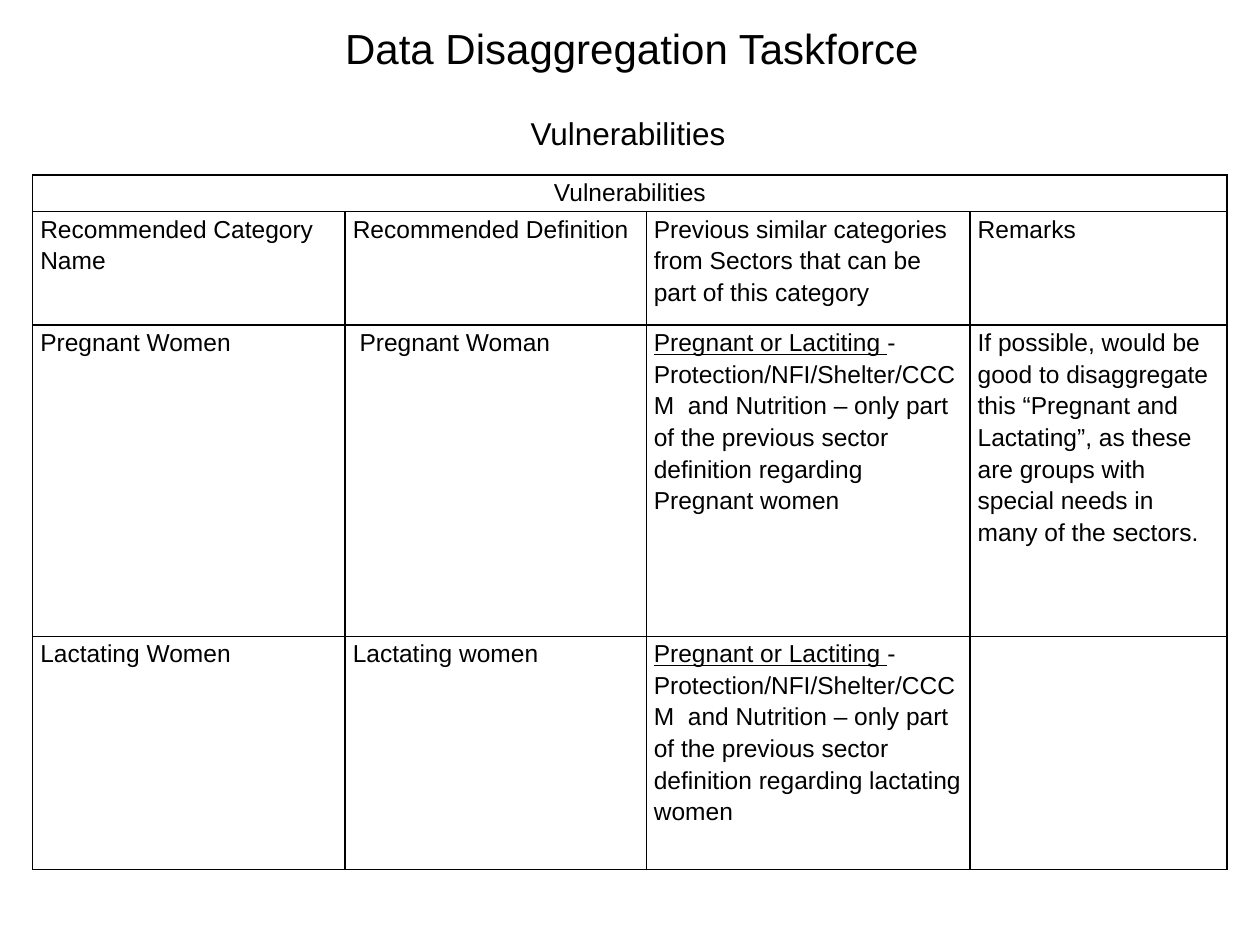
from typing import NamedTuple

from lxml.etree import SubElement
from pptx import Presentation
from pptx.dml.color import RGBColor
from pptx.enum.text import PP_ALIGN
from pptx.oxml.ns import qn
from pptx.util import Inches, Pt

INK, PAPER = "000000", "FFFFFF"
COLS = [2.48, 2.39, 2.57, 2.04]
ROWS = [0.29, 0.9, 2.47, 1.85]
MARGINS = {"margin_left": 0.06, "margin_right": 0.06,
           "margin_top": 0, "margin_bottom": 0}


class Run(NamedTuple):
    text: str
    under: bool = False


class Head(NamedTuple):
    text: str
    left: float
    top: float
    high: float
    size: int


def prior(group: str) -> list[Run]:
    """Return the earlier sector category that covers one group of women."""
    return [Run("Pregnant or Lactiting ", True),
            Run("- Protection/NFI/Shelter/CCCM  and Nutrition – only part of "
                f"the previous sector definition regarding {group} women")]


HEADS = [Head("Data Disaggregation Taskforce", 0.29, 0.13, 0.5, 24),
         Head("Vulnerabilities", 0.26, 0.86, 0.4, 18)]
BODY = [
    [[Run("Vulnerabilities")], [], [], []],
    [[Run("Recommended Category Name")], [Run("Recommended Definition")],
     [Run("Previous similar categories from Sectors that can be part of "
          "this category")], [Run("Remarks")]],
    [[Run("Pregnant Women")], [Run(" Pregnant Woman")], prior("Pregnant"),
     [Run("If possible, would be good to disaggregate this “Pregnant and "
          "Lactating”, as these are groups with special needs in many of "
          "the sectors.")]],
    [[Run("Lactating Women")], [Run("Lactating women")],
     prior("lactating"), []],
]


def color(code: str) -> RGBColor:
    return RGBColor.from_string(code)


def write(para, runs: list[Run], size: int) -> None:
    para.font.size = Pt(size)
    for item in runs:
        run = para.add_run()
        run.text = item.text
        look = {"name": "Arial", "size": Pt(size), "underline": item.under}
        for key, value in look.items():
            setattr(run.font, key, value)
        run.font.color.rgb = color(INK)


def draw_head(slide, head: Head) -> None:
    box = slide.shapes.add_textbox(Inches(head.left), Inches(head.top),
                                   Inches(9.45), Inches(head.high))
    box.text_frame.word_wrap = True
    para = box.text_frame.paragraphs[0]
    para.alignment = PP_ALIGN.CENTER
    write(para, [Run(head.text)], head.size)


def border(cell) -> None:
    """Put a thin line on all four sides; call before the fill is set."""
    props = cell._tc.get_or_add_tcPr()
    for side in ("a:lnL", "a:lnR", "a:lnT", "a:lnB"):
        line = SubElement(props, qn(side), w=str(Pt(1)))
        fill = SubElement(line, qn("a:solidFill"))
        SubElement(fill, qn("a:srgbClr"), val=INK)


def draw_cell(cell, runs: list[Run]) -> None:
    border(cell)
    cell.fill.solid()
    cell.fill.fore_color.rgb = color(PAPER)
    for key, value in MARGINS.items():
        setattr(cell, key, Inches(value))
    para = cell.text_frame.paragraphs[0]
    para.line_spacing = 1.15
    write(para, runs, 14)


def draw_table(slide) -> None:
    table = slide.shapes.add_table(
        len(ROWS), len(COLS), Inches(0.26), Inches(1.39),
        Inches(sum(COLS)), Inches(sum(ROWS))).table
    table.first_row = table.horz_banding = False
    for col, wide in zip(table.columns, COLS):
        col.width = Inches(wide)
    for row, high, texts in zip(table.rows, ROWS, BODY):
        row.height = Inches(high)
        for cell, runs in zip(row.cells, texts):
            draw_cell(cell, runs)
    title = table.cell(0, 0)
    title.merge(table.cell(0, len(COLS) - 1))
    title.text_frame.paragraphs[0].alignment = PP_ALIGN.CENTER


def main() -> None:
    deck = Presentation()
    deck.slide_width, deck.slide_height = Inches(10), Inches(7.5)
    slide = deck.slides.add_slide(deck.slide_layouts[6])
    slide.background.fill.solid()
    slide.background.fill.fore_color.rgb = color(PAPER)
    for head in HEADS:
        draw_head(slide, head)
    draw_table(slide)
    deck.save("out.pptx")


if __name__ == "__main__":
    main()
